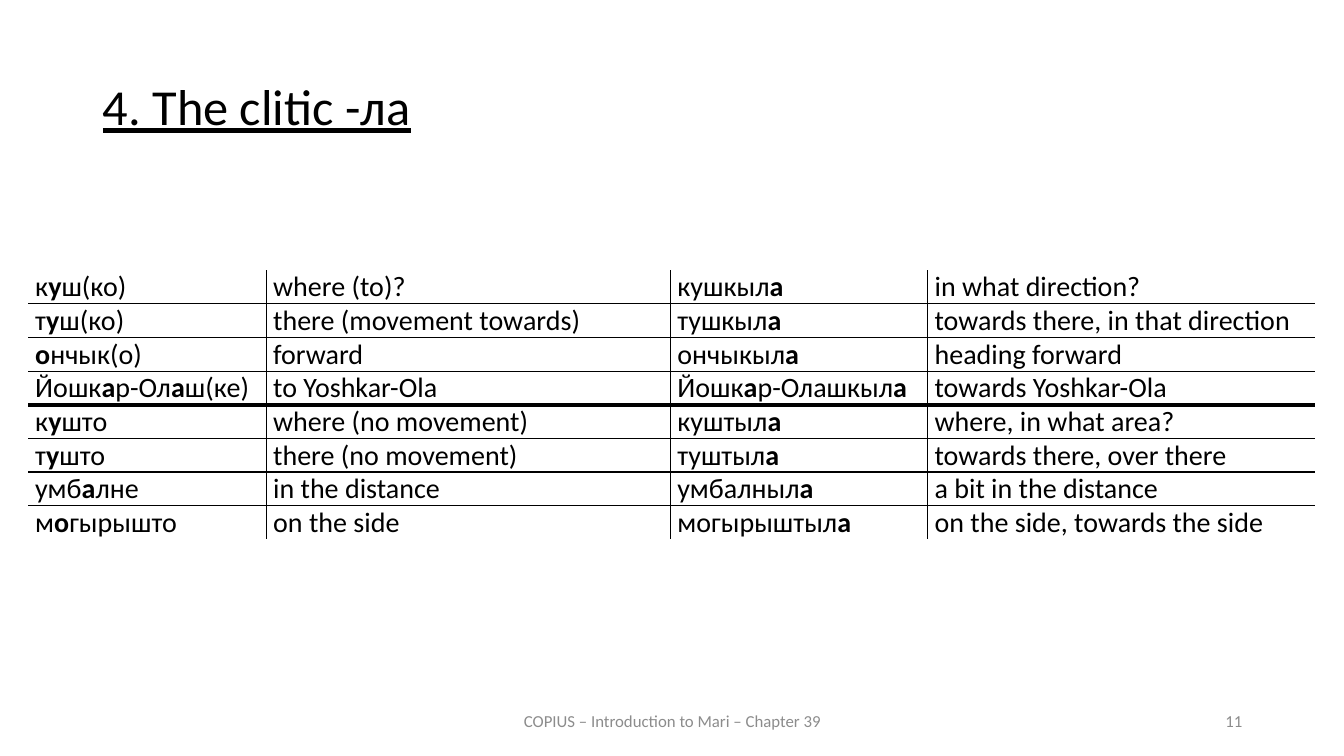
"""Build the slide on the Mari clitic -ла."""
import pptx
import pptx.dml.color
import pptx.enum.text
import pptx.oxml
import pptx.oxml.ns
import pptx.util

Inches = pptx.util.Inches
Pt = pptx.util.Pt
ALIGN = pptx.enum.text.PP_ALIGN
ANCHOR = pptx.enum.text.MSO_ANCHOR

COLORS = {"ink": "000000", "footer": "8C8C8C"}
NO_STYLE = "{2D5ABB26-0587-4C30-8999-92F81FD0307C}"
COLUMN_WIDTHS = [2.36, 4.01, 2.55, 3.84]
THICK_RULE_ROW = 4
WORDS = [
    ("к*у*ш(ко)", "where (to)?", "кушкыл*а*", "in what direction?"),
    ("т*у*ш(ко)", "there (movement towards)", "тушкыл*а*",
     "towards there, in that direction"),
    ("*о*нчык(о)", "forward", "ончыкыл*а*", "heading forward"),
    ("Йошк*а*р-Ол*а*ш(ке)", "to Yoshkar-Ola", "Йошк*а*р-Олашкыл*а*",
     "towards Yoshkar-Ola"),
    ("к*у*што", "where (no movement)", "куштыл*а*", "where, in what area?"),
    ("т*у*што", "there (no movement)", "туштыл*а*", "towards there, over there"),
    ("умб*а*лне", "in the distance", "умбалныл*а*", "a bit in the distance"),
    ("м*о*гырышто", "on the side", "могырыштыл*а*",
     "on the side, towards the side"),
]


def apply(target, formats):
    for name, value in formats.items():
        setattr(target, name, value)


class Lesson:
    """Holds the style and the current slide."""

    def __init__(self, deck, font="Calibri"):
        self.font = font
        self.slide = deck.slides.add_slide(deck.slide_layouts[5])

    def add_words(self, paragraph, text, size, color, **formats):
        for index, part in enumerate(text.split("*")):
            if part:
                run = paragraph.add_run()
                run.text = part
                apply(run.font, {"name": self.font, "size": Pt(size),
                                 "bold": index % 2 == 1, **formats})
                run.font.color.rgb = pptx.dml.color.RGBColor.from_string(COLORS[color])

    def heading(self, text, left, top, width, height):
        title = self.slide.shapes.title
        apply(title, {"left": Inches(left), "top": Inches(top),
                      "width": Inches(width), "height": Inches(height)})
        apply(title.text_frame, {"vertical_anchor": ANCHOR.TOP, "word_wrap": True,
                                 "auto_size": pptx.enum.text.MSO_AUTO_SIZE.NONE})
        paragraph = title.text_frame.paragraphs[0]
        apply(paragraph, {"alignment": ALIGN.JUSTIFY, "line_spacing": 0.9,
                          "space_before": Pt(12)})
        self.add_words(paragraph, text, 36, "ink", underline=True)

    def footer(self, text, left, width, alignment):
        frame = self.slide.shapes.add_textbox(
            Inches(left), Inches(6.95), Inches(width), Inches(0.4)).text_frame
        apply(frame, {"word_wrap": True, "vertical_anchor": ANCHOR.MIDDLE})
        frame.paragraphs[0].alignment = alignment
        self.add_words(frame.paragraphs[0], text, 12, "footer")

    def border(self, cell, side, points):
        cell._tc.get_or_add_tcPr().append(pptx.oxml.parse_xml(
            f'<a:{side} {pptx.oxml.ns.nsdecls("a")} w="{Pt(points)}">'
            f'<a:solidFill><a:srgbClr val="{COLORS["ink"]}"/></a:solidFill>'
            f'<a:prstDash val="solid"/></a:{side}>'))

    def word_table(self, rows, widths, left, top, row_height):
        table = self.slide.shapes.add_table(
            len(rows), len(widths), Inches(left), Inches(top),
            Inches(sum(widths)), Inches(row_height * len(rows))).table
        apply(table, {"first_row": False, "horz_banding": False})
        table._tbl.tblPr.find(pptx.oxml.ns.qn("a:tableStyleId")).text = NO_STYLE
        for column, width in zip(table.columns, widths):
            column.width = Inches(width)
        for r, row in enumerate(rows):
            for c, text in enumerate(row):
                cell = table.cell(r, c)
                apply(cell, {"vertical_anchor": ANCHOR.MIDDLE,
                             "margin_left": Inches(0.07), "margin_right": Inches(0.07),
                             "margin_top": 0, "margin_bottom": 0})
                self.add_words(cell.text_frame.paragraphs[0], text, 20, "ink")
                inner_sides = {"lnL": c > 0, "lnR": c < len(widths) - 1,
                               "lnT": r > 0, "lnB": r < len(rows) - 1}
                thick_side = {THICK_RULE_ROW - 1: "lnB", THICK_RULE_ROW: "lnT"}.get(r)
                for side, inner in inner_sides.items():
                    if inner:
                        self.border(cell, side, 3 if side == thick_side else 1)
                cell.fill.background()


def main():
    deck = pptx.Presentation()
    apply(deck, {"slide_width": Inches(13.33), "slide_height": Inches(7.5)})
    lesson = Lesson(deck)
    lesson.heading("4. The clitic -ла", 0.92, 0.76, 11.5, 0.83)
    lesson.footer("COPIUS – Introduction to Mari – Chapter 39", 4.42, 4.5, ALIGN.CENTER)
    lesson.footer("11", 9.42, 3, ALIGN.RIGHT)
    lesson.word_table(WORDS, COLUMN_WIDTHS, 0.28, 2.68, 0.33)
    deck.save("out.pptx")


if __name__ == "__main__":
    main()
